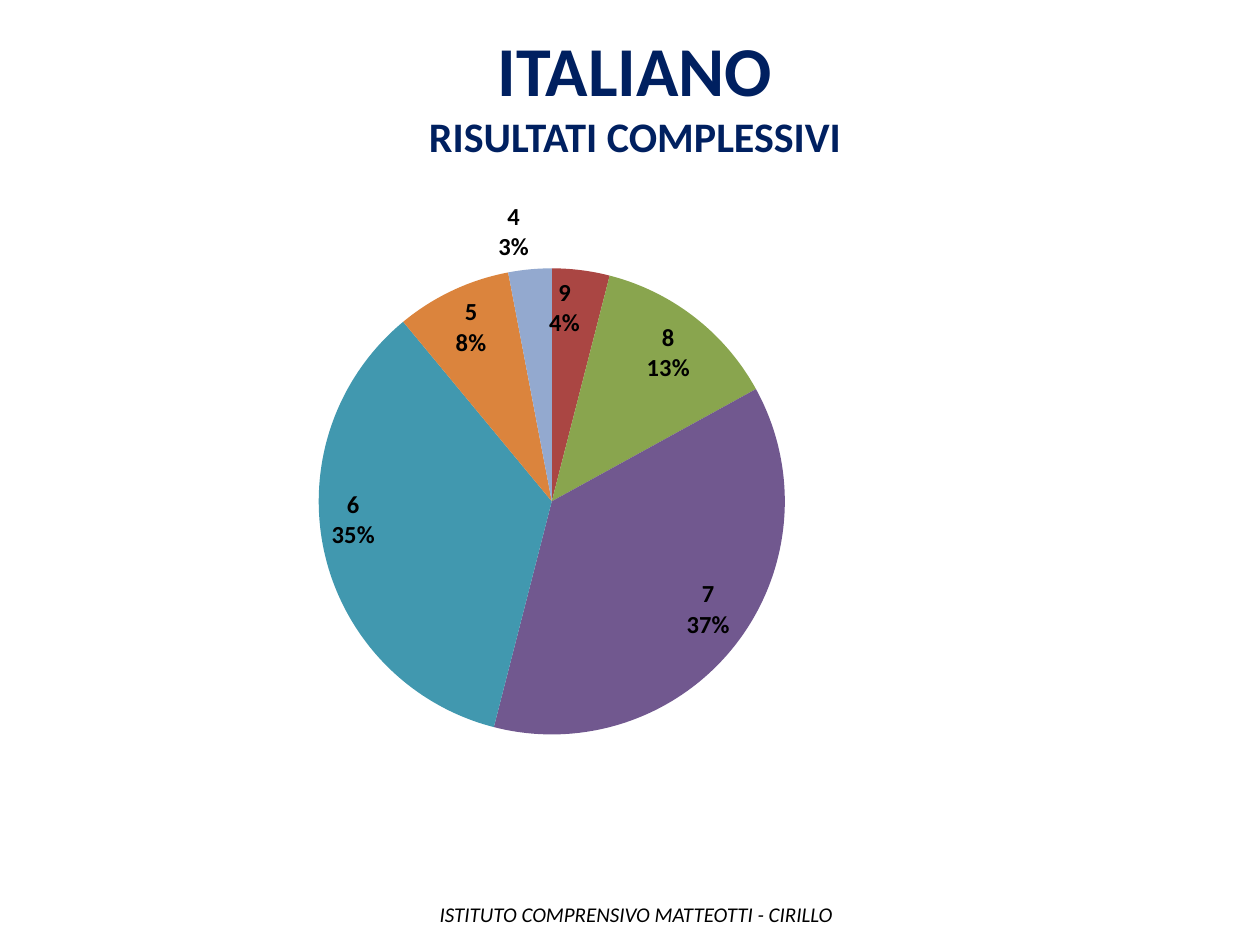
import pptx
import pptx.chart.data
import pptx.dml.color
import pptx.enum.chart
import pptx.enum.text
import pptx.util
from lxml import etree
from pptx.oxml.ns import qn

Inches = pptx.util.Inches
Align = pptx.enum.text.PP_ALIGN
LabelPosition = pptx.enum.chart.XL_LABEL_POSITION

# Content
HEADING = [("ITALIANO", "title"), ("RISULTATI COMPLESSIVI", "subtitle")]
SCHOOL = [("ISTITUTO COMPRENSIVO MATTEOTTI - CIRILLO", "footer")]
# grade, percentage, slice colour
GRADES = [
    ("10", 0, "4572A7"),
    ("9", 4, "AA4643"),
    ("8", 13, "89A54E"),
    ("7", 37, "71588F"),
    ("6", 35, "4198AF"),
    ("5", 8, "DB843D"),
    ("4", 3, "93A9CF"),
]
OUTSIDE_GRADE = "4"

THEME = {
    "font": "Calibri",
    "title": {"size": 40, "color": "002060", "bold": True},
    "subtitle": {"size": 24, "color": "002060", "bold": True},
    "footer": {"size": 12, "color": "000000", "italic": True},
    "label": {"size": 14, "color": "000000", "bold": True},
}

# Left, top, width, height in inches
HEADING_BOX = (1.38, 0.16, 7.32, 1.18)
FOOTER_BOX = (3.39, 7.11, 3.45, 0.3)
CHART_BOX = (0.43, 1.47, 7.9, 4.51)
PIE_BOX = (2.53, 2.13, 3.7, 3.7)


def rgb(color):
    return pptx.dml.color.RGBColor.from_string(color)


def style_font(font, role):
    style = THEME[role]
    font.name = THEME["font"]
    font.size = pptx.util.Pt(style["size"])
    font.color.rgb = rgb(style["color"])
    font.bold = style.get("bold", False)
    font.italic = style.get("italic", False)


def add_text(slide, box, lines, align, wrap):
    frame = slide.shapes.add_textbox(*map(Inches, box)).text_frame
    frame.word_wrap = wrap
    for index, (wording, role) in enumerate(lines):
        paragraph = frame.add_paragraph() if index else frame.paragraphs[0]
        paragraph.alignment = align
        run = paragraph.add_run()
        run.text = wording
        style_font(run.font, role)


def place_pie(chart):
    """Fix the pie inside the chart frame, as fractions of the frame."""
    left, top, width, height = CHART_BOX
    fractions = {
        "x": (PIE_BOX[0] - left) / width,
        "y": (PIE_BOX[1] - top) / height,
        "w": PIE_BOX[2] / width,
        "h": PIE_BOX[3] / height,
    }
    plot_area = chart._chartSpace.chart.plotArea
    for old_layout in plot_area.findall(qn("c:layout")):
        plot_area.remove(old_layout)
    layout = etree.Element(qn("c:layout"))
    manual = etree.SubElement(layout, qn("c:manualLayout"))
    settings = {"layoutTarget": "inner", "xMode": "edge", "yMode": "edge"}
    settings.update({key: f"{part:.4f}" for key, part in fractions.items()})
    for tag, setting in settings.items():
        etree.SubElement(manual, qn("c:" + tag)).set("val", setting)
    plot_area.insert(0, layout)


def label_slices(series):
    """Grade above percentage; an empty slice gets no label."""
    for index, (grade, percentage, _) in enumerate(GRADES):
        label = series.points[index].data_label
        style_font(label.font, "label")
        outside = grade == OUTSIDE_GRADE
        label.position = LabelPosition.OUTSIDE_END if outside else LabelPosition.INSIDE_END

    for mark, (_, percentage, _) in zip(series._element.iter(qn("c:dLbl")), GRADES):
        if percentage == 0:
            for child in list(mark)[1:]:
                mark.remove(child)
            etree.SubElement(mark, qn("c:delete")).set("val", "1")
            continue
        for tag, shown in (("showVal", "0"), ("showCatName", "1"), ("showPercent", "1")):
            mark.find(qn("c:" + tag)).set("val", shown)
        separator = etree.Element(qn("c:separator"))
        separator.text = "\n"
        mark.find(qn("c:showBubbleSize")).addnext(separator)


def add_pie(slide):
    results = pptx.chart.data.CategoryChartData()
    results.categories = [grade for grade, _, _ in GRADES]
    results.add_series("Series 1", [percentage for _, percentage, _ in GRADES])
    chart = slide.shapes.add_chart(
        pptx.enum.chart.XL_CHART_TYPE.PIE, *map(Inches, CHART_BOX), results
    ).chart
    chart.has_legend = False
    chart.has_title = False
    style_font(chart.font, "label")
    chart.plots[0].vary_by_categories = True
    series = chart.plots[0].series[0]
    for index, (_, _, color) in enumerate(GRADES):
        slice_format = series.points[index].format
        slice_format.fill.solid()
        slice_format.fill.fore_color.rgb = rgb(color)
        slice_format.line.fill.background()
    label_slices(series)
    place_pie(chart)


def main():
    deck = pptx.Presentation()
    deck.slide_width, deck.slide_height = Inches(10), Inches(7.5)
    slide = deck.slides.add_slide(deck.slide_layouts[6])
    add_text(slide, HEADING_BOX, HEADING, Align.CENTER, True)
    add_text(slide, FOOTER_BOX, SCHOOL, Align.LEFT, False)
    add_pie(slide)
    deck.save("out.pptx")


if __name__ == "__main__":
    main()
